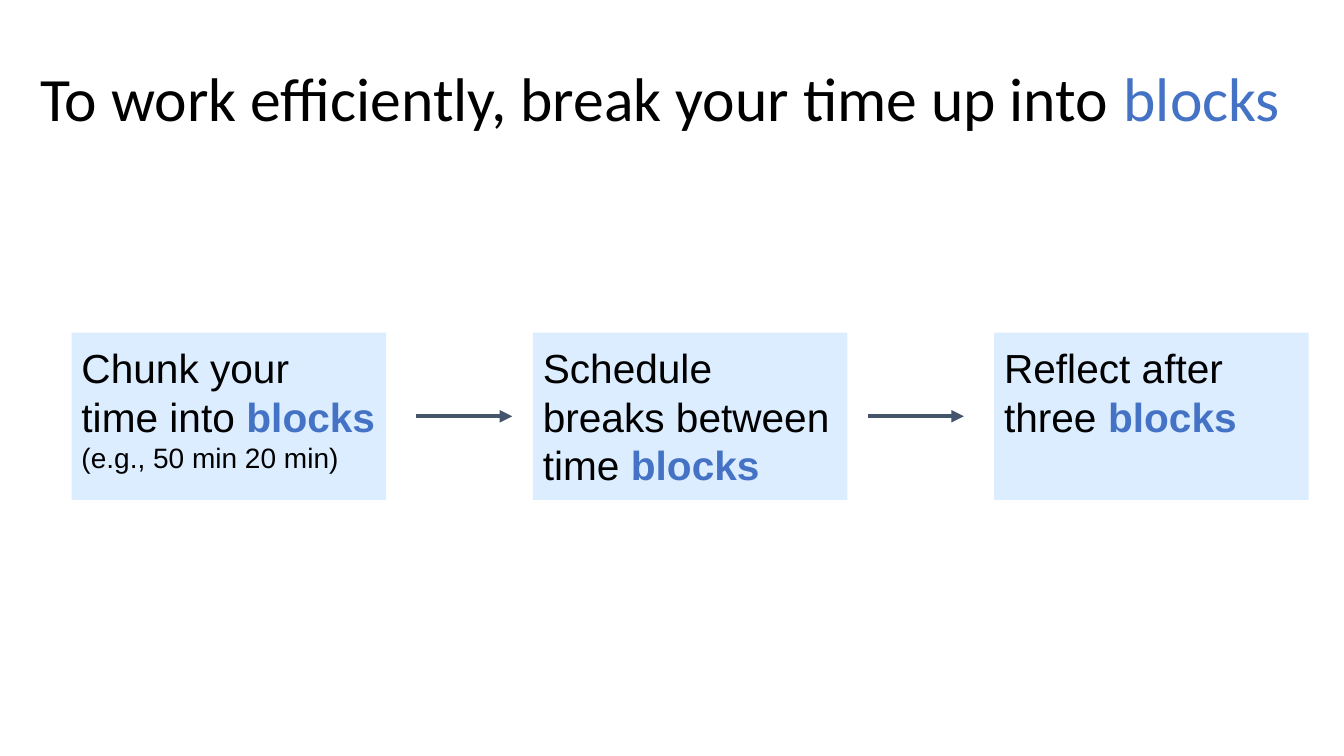
from lxml import etree
from pptx import Presentation
from pptx import util as u
from pptx.dml.color import RGBColor
from pptx.enum import shapes, text
from pptx.oxml import ns

BLACK, BLUE, PALE, SLATE = "000000", "4472C4", "DCEDFF", "44546A"

HEADLINE = [[("To work efficiently, break your time up into ", 44, BLACK, False), ("blocks", 44, BLUE, False)]]
KEYWORD = ("blocks", 29, BLUE, True)
STEPS = [
    [[("Chunk your time into ", 29, BLACK, False), KEYWORD],
     [("(e.g., 50 min 20 min)", 20, BLACK, False)]],
    [[("Schedule breaks between time ", 29, BLACK, False), KEYWORD]],
    [[("Reflect after three ", 29, BLACK, False), KEYWORD]],
]

STEP_LEFT, STEP_TOP, STEP_WIDTH, STEP_HEIGHT = 0.71, 3.3, 3.12, 1.66
STEP_PITCH = 4.575
ARROW_LEFT, ARROW_LENGTH, ARROW_PITCH = 4.13, 0.95, 4.48


def colour(value):
    return RGBColor.from_string(value)


def write(frame, paragraphs, font_name, margin_y, anchor, spacing):
    settings = {
        "word_wrap": True, "auto_size": text.MSO_AUTO_SIZE.NONE, "vertical_anchor": anchor,
        "margin_left": u.Inches(0.1), "margin_right": u.Inches(0.1),
        "margin_top": u.Inches(margin_y), "margin_bottom": u.Inches(margin_y),
    }
    for key, value in settings.items():
        setattr(frame, key, value)
    for index, pieces in enumerate(paragraphs):
        paragraph = frame.add_paragraph() if index else frame.paragraphs[0]
        paragraph.alignment = text.PP_ALIGN.LEFT
        paragraph.line_spacing = spacing
        for words, size, shade, bold in pieces:
            run = paragraph.add_run()
            run.text = words
            for key, value in {"name": font_name, "size": u.Pt(size), "bold": bold}.items():
                setattr(run.font, key, value)
            run.font.color.rgb = colour(shade)


def add_step(slide, index, paragraphs):
    step = slide.shapes.add_shape(
        shapes.MSO_SHAPE.RECTANGLE, u.Inches(STEP_LEFT + index * STEP_PITCH),
        u.Inches(STEP_TOP), u.Inches(STEP_WIDTH), u.Inches(STEP_HEIGHT))
    step.shadow.inherit = False
    step.fill.solid()
    step.fill.fore_color.rgb = colour(PALE)
    step.line.fill.background()
    write(step.text_frame, paragraphs, "Arial", 0.1, text.MSO_ANCHOR.TOP, 1.0)


def add_arrow(slide, index):
    left = ARROW_LEFT + index * ARROW_PITCH
    middle = u.Inches(STEP_TOP + STEP_HEIGHT / 2)
    arrow = slide.shapes.add_connector(
        shapes.MSO_CONNECTOR.STRAIGHT, u.Inches(left), middle, u.Inches(left + ARROW_LENGTH), middle)
    arrow.line.color.rgb = colour(SLATE)
    arrow.line.width = u.Pt(3)
    properties = arrow.element.spPr
    etree.SubElement(properties.find(ns.qn("a:ln")), ns.qn("a:tailEnd"), type="triangle")
    etree.SubElement(properties, ns.qn("a:effectLst"))


def main():
    deck = Presentation()
    deck.slide_width, deck.slide_height = u.Inches(13.33), u.Inches(7.5)
    slide = deck.slides.add_slide(deck.slide_layouts[5])
    headline = slide.shapes.title
    for key, value in {"left": 0.3, "top": 0.28, "width": 12.91, "height": 1.45}.items():
        setattr(headline, key, u.Inches(value))
    write(headline.text_frame, HEADLINE, "Calibri", 0.05, text.MSO_ANCHOR.MIDDLE, 0.9)
    for index, paragraphs in enumerate(STEPS):
        add_step(slide, index, paragraphs)
    for index in range(len(STEPS) - 1):
        add_arrow(slide, index)
    deck.save("out.pptx")


if __name__ == "__main__":
    main()
